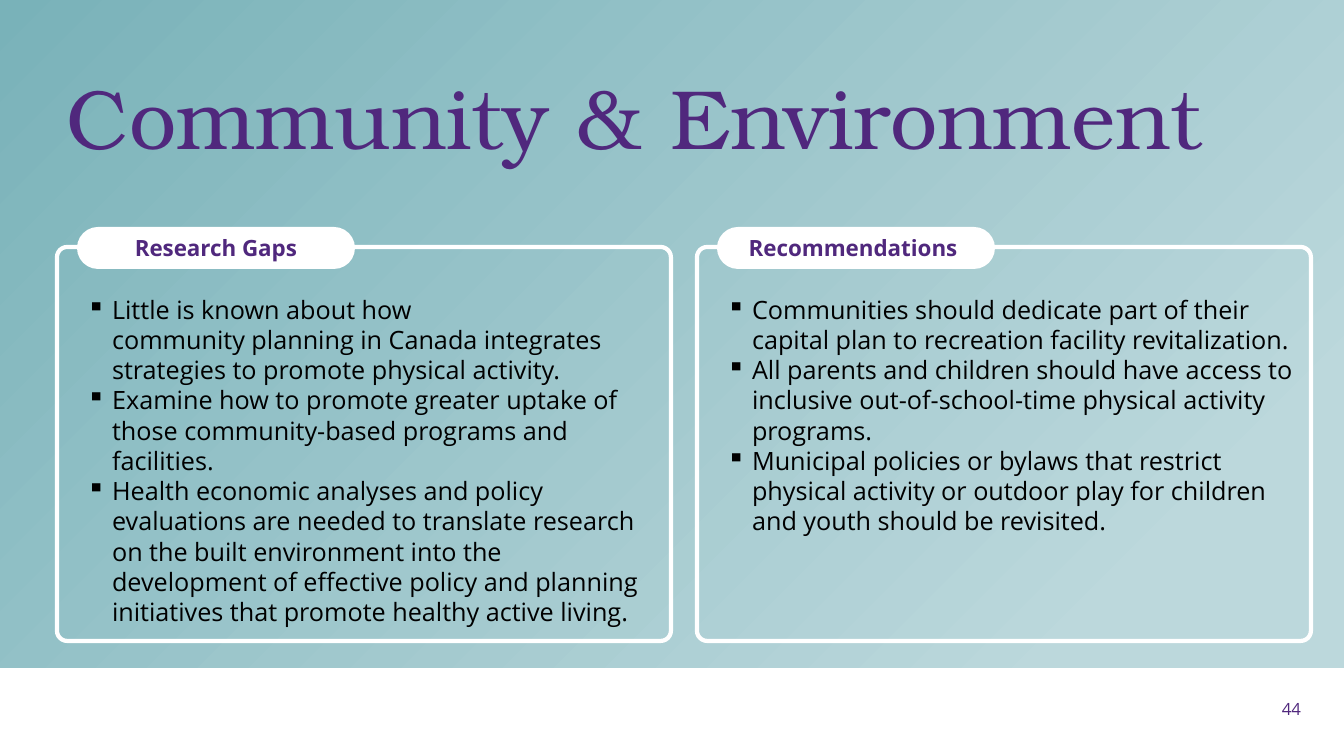
import pptx
import pptx.util
import pptx.dml.color
import pptx.enum.shapes
import pptx.enum.text
import pptx.oxml
import pptx.oxml.ns

TITLE = "Community & Environment"
PAGE = "44"
PANELS = [
    ("Research Gaps", [
        "Little is known about how community\u00a0planning in Canada integrates strategies to promote physical activity.",
        "Examine how to promote greater uptake of those community-based programs and facilities.",
        "Health economic analyses and policy evaluations are needed to translate research on the built environment into the development of effective policy and planning initiatives that promote healthy active living.",
    ]),
    ("Recommendations ", [
        "Communities should dedicate part of their capital plan to recreation facility revitalization.",
        "All parents and children should have access to inclusive out-of-school-time physical activity programs.",
        "Municipal policies or bylaws that restrict physical activity or outdoor play for children and youth should be revisited.",
    ]),
]
HEX = {"white": "FFFFFF", "black": "000000", "plum": "50287D",
       "pale": "BCD8DC", "teal": "79B2B9"}
WIDE, HIGH, BAND = 1344, 756, 668
LEFT, STEP = 57, 640

Pt = pptx.util.Pt
Align = pptx.enum.text.PP_ALIGN
Kind = pptx.enum.shapes.MSO_SHAPE
MIDDLE = pptx.enum.text.MSO_ANCHOR.MIDDLE
TOP = pptx.enum.text.MSO_ANCHOR.TOP
STYLES = {
    "title": {"size": Pt(60), "name": "TeX Gyre Bonum", "bold": False},
    "body": {"size": Pt(18), "name": "Open Sans", "bold": False},
    "label": {"size": Pt(16), "name": "Open Sans", "bold": True},
    "page": {"size": Pt(12), "name": "Open Sans", "bold": False},
}


def px(*sizes):
    return [round(size * 914400 / 100.8) for size in sizes]


def tint(name):
    return pptx.dml.color.RGBColor.from_string(HEX[name])


def block(slide, kind, spot, fill=None, edge=None, curve=None):
    shape = slide.shapes.add_shape(kind, *px(*spot))
    shape.shadow.inherit = False
    if curve is not None:
        shape.adjustments[0] = curve
    if fill:
        shape.fill.solid()
        shape.fill.fore_color.rgb = tint(fill)
    else:
        shape.fill.background()
    if edge:
        shape.line.color.rgb = tint(edge)
        shape.line.width = Pt(3)
    else:
        shape.line.fill.background()
    return shape


def bullet(para):
    props = para._p.get_or_add_pPr()
    inset = px(25.2)[0]
    props.set("marL", str(inset))
    props.set("indent", str(-inset))
    mark = props.makeelement(pptx.oxml.ns.qn("a:buChar"), {"char": "▪"})
    props.append(mark)


def write(shape, lines, style, color, align, anchor, space=None, marked=False):
    frame = shape.text_frame
    frame.word_wrap = True
    frame.vertical_anchor = anchor
    for n, line in enumerate(lines):
        para = frame.paragraphs[0] if n == 0 else frame.add_paragraph()
        para.alignment = align
        if space:
            para.line_spacing = Pt(space)
        if marked:
            bullet(para)
        run = para.add_run()
        run.text = line
        for key, value in STYLES[style].items():
            setattr(run.font, key, value)
        run.font.color.rgb = tint(color)


def shade(shape):
    shape.fill.gradient()
    stops = zip(shape.fill.gradient_stops, [("pale", 0.14), ("teal", 1)])
    for stop, (name, place) in stops:
        stop.color.rgb = tint(name)
        stop.position = place
    grad = shape._element.spPr.find(pptx.oxml.ns.qn("a:gradFill"))
    line = grad.find(pptx.oxml.ns.qn("a:lin"))
    focus = pptx.oxml.parse_xml(
        '<a:path %s path="circle"><a:fillToRect l="100000" t="100000"/></a:path>'
        % pptx.oxml.ns.nsdecls("a"))
    grad.replace(line, focus)


def panel(slide, left, label, points):
    block(slide, Kind.ROUNDED_RECTANGLE, (left, 247, 614, 394),
          edge="white", curve=0.026)
    body = slide.shapes.add_textbox(*px(left + 20, 289, 591, 298))
    write(body, points, "body", "black", Align.LEFT, TOP, 21.6, True)
    pill = block(slide, Kind.ROUNDED_RECTANGLE, (left + 20, 227, 278, 42),
                 fill="white", curve=0.5)
    write(pill, [label], "label", "plum", Align.CENTER, MIDDLE)


def main():
    deck = pptx.Presentation()
    deck.slide_width, deck.slide_height = px(WIDE, HIGH)
    slide = deck.slides.add_slide(deck.slide_layouts[6])
    shade(block(slide, Kind.RECTANGLE, (0, 0, WIDE, BAND)))
    block(slide, Kind.RECTANGLE, (0, BAND, WIDE, HIGH - BAND), fill="white")
    page = slide.shapes.add_textbox(*px(1264, 689, 47, 40))
    write(page, [PAGE], "page", "plum", Align.RIGHT, MIDDLE)
    title = slide.shapes.add_textbox(*px(LEFT, 55, 1207, 146))
    write(title, [TITLE], "title", "plum", Align.LEFT, MIDDLE, 55)
    for n, (label, points) in enumerate(PANELS):
        panel(slide, LEFT + n * STEP, label, points)
    deck.save("out.pptx")


if __name__ == "__main__":
    main()
